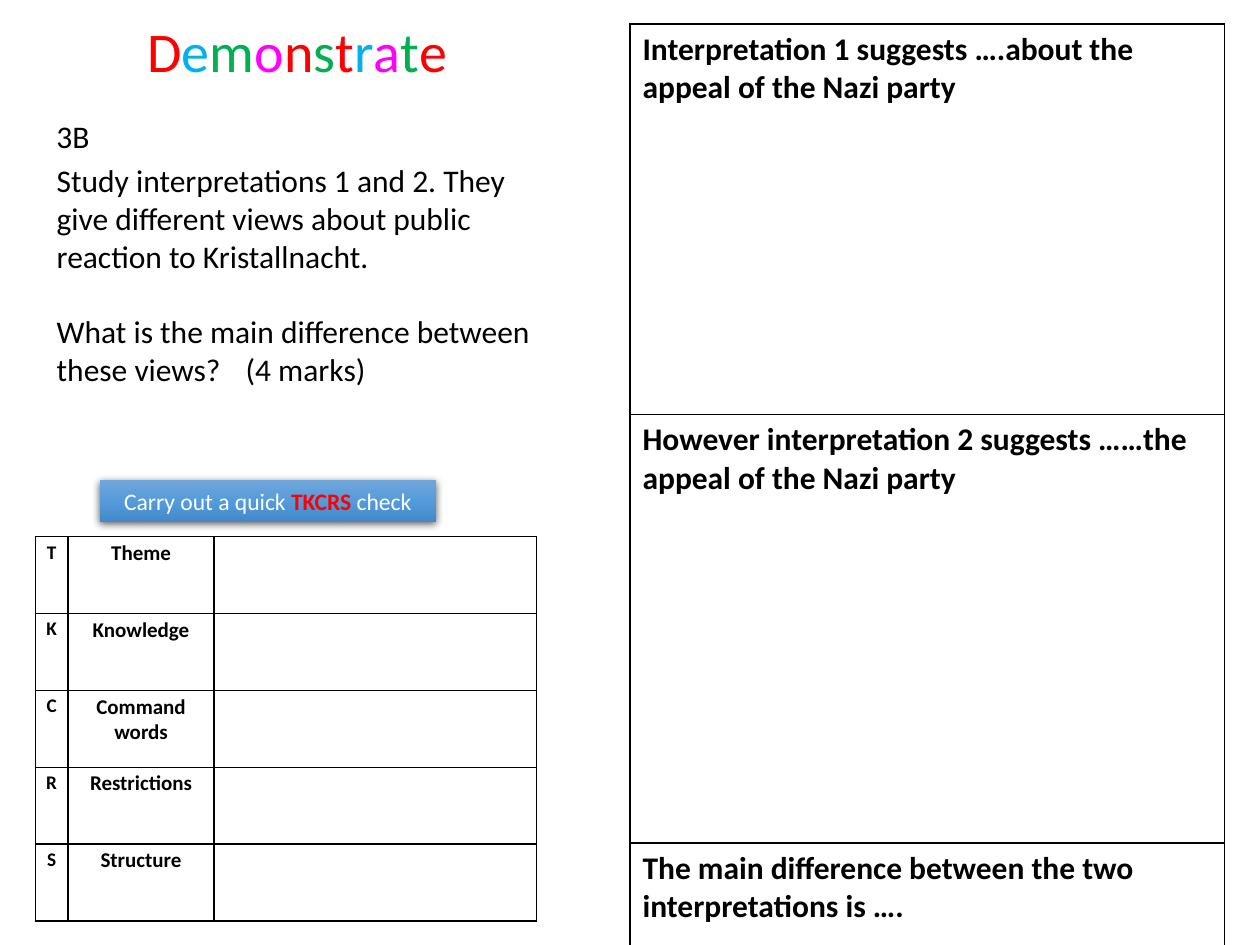
from copy import deepcopy

from lxml.etree import SubElement
from pptx import Presentation
from pptx.dml.color import RGBColor
from pptx.enum.shapes import MSO_SHAPE
from pptx.enum.text import MSO_ANCHOR, MSO_AUTO_SIZE, PP_ALIGN
from pptx.oxml import parse_xml
from pptx.oxml.ns import nsdecls, qn
from pptx.util import Inches, Pt

theme = {
    "font": "Calibri",
    "black": "000000", "white": "FFFFFF", "red": "FF0000",
    "blue": "00B0F0", "green": "00B050", "pink": "FF00FF",
    "grad": [(0, "71A6DB"), (0.5, "559BDB"), (1, "448ACA")],
    "title": 32, "body": 18, "check": 13.5, "key": 11, "label": 12,
}


def write(para, text, size, color="black", bold=False):
    run = para.add_run()
    run.text = text
    form = {"name": theme["font"], "size": Pt(theme[size]), "bold": bold}
    for key, value in form.items():
        setattr(run.font, key, value)
    run.font.color.rgb = RGBColor.from_string(theme[color])


def grid(left, top, cols, rows):
    frame = slide.shapes.add_table(
        len(rows), len(cols), Inches(left), Inches(top),
        Inches(sum(cols)), Inches(sum(rows)))
    table = frame.table
    table.first_row = table.horz_banding = False
    for col, width in zip(table.columns, cols):
        col.width = Inches(width)
    for row, height in zip(table.rows, rows):
        row.height = Inches(height)
    # Plain cells with thin black borders
    for cell in table.iter_cells():
        props = cell._tc.get_or_add_tcPr()
        for side in ("lnL", "lnR", "lnT", "lnB"):
            line = SubElement(props, qn("a:" + side), w=str(Pt(1)))
            fill = SubElement(line, qn("a:solidFill"))
            SubElement(fill, qn("a:srgbClr"), val=theme["black"])
        cell.fill.background()
    return table


deck = Presentation()
deck.slide_width, deck.slide_height = Inches(10), Inches(7.5)
slide = deck.slides.add_slide(deck.slide_layouts[1])
title, body = slide.placeholders

# Place the title and the question
places = [(title, (1.07, 0.08, 5.35, 0.64)), (body, (0.35, 1.23, 4.09, 1.92))]
for shape, place in places:
    shape.left, shape.top, shape.width, shape.height = map(Inches, place)
    form = {"auto_size": MSO_AUTO_SIZE.NONE, "word_wrap": True,
            "vertical_anchor": MSO_ANCHOR.TOP}
    for key, value in form.items():
        setattr(shape.text_frame, key, value)

# Title, one colour per letter
para = title.text_frame.paragraphs[0]
para.alignment = PP_ALIGN.LEFT
hues = ["red", "blue", "green", "pink", "red", "green",
        "red", "blue", "pink", "green", "red"]
for letter, hue in zip("Demonstrate", hues):
    write(para, letter, "title", hue)

# Question number
label = slide.shapes.add_textbox(
    Inches(0.35), Inches(0.88), Inches(0.47), Inches(0.4))
label.text_frame.word_wrap = False
write(label.text_frame.paragraphs[0], "3B", "body")

# Question, with the marks on a right tab
lines = [
    ("Study interpretations 1 and 2. They give different views about "
     "public reaction to Kristallnacht.", 0),
    ("What is the main difference between these views?\t(4 marks)", 21.6),
]
frame = body.text_frame
for i, (text, gap) in enumerate(lines):
    para = frame.add_paragraph() if i else frame.paragraphs[0]
    para.space_before = Pt(gap)
    write(para, text, "body")
    props = para._p.get_or_add_pPr()
    props.set("marL", "0")
    props.set("indent", "0")
    SubElement(props, qn("a:buNone"))
    tabs = SubElement(props, qn("a:tabLst"))
    SubElement(tabs, qn("a:tab"), pos=str(Inches(3.83)), algn="r")

# Check banner
banner = slide.shapes.add_shape(
    MSO_SHAPE.RECTANGLE, Inches(0.79), Inches(3.81), Inches(2.67), Inches(0.33))
banner.line.fill.background()
banner.fill.gradient()
banner.fill.gradient_angle = 270
stops = banner._element.spPr.find(".//" + qn("a:gsLst"))
stops.append(deepcopy(stops[0]))
for stop, (spot, color) in zip(banner.fill.gradient_stops, theme["grad"]):
    stop.position = spot
    stop.color.rgb = RGBColor.from_string(color)
banner._element.spPr.append(parse_xml(
    f'<a:effectLst {nsdecls("a")}><a:outerShdw blurRad="{Pt(4.5)}" '
    f'dist="{Pt(1.5)}" dir="5400000" rotWithShape="0">'
    f'<a:srgbClr val="{theme["black"]}"><a:alpha val="63000"/></a:srgbClr>'
    '</a:outerShdw></a:effectLst>'))
para = banner.text_frame.paragraphs[0]
para.alignment = PP_ALIGN.CENTER
write(para, "Carry out a quick ", "check", "white")
write(para, "TKCRS", "check", "red", True)
write(para, " check", "check", "white")

# Check table
checks = ["Theme", "Knowledge", "Command\nwords", "Restrictions", "Structure"]
table = grid(0.28, 4.26, [0.26, 1.16, 2.56], [0.61] * len(checks))
inset = {"margin_left": 0.06, "margin_right": 0.06,
         "margin_top": 0.03, "margin_bottom": 0.03}
for r, (key, name) in enumerate(zip("TKCRS", checks)):
    for c, (text, size) in enumerate([(key, "key"), (name, "label")]):
        cell = table.cell(r, c)
        for side, value in inset.items():
            setattr(cell, side, Inches(value))
        for i, part in enumerate(text.split("\n")):
            frame = cell.text_frame
            para = frame.add_paragraph() if i else frame.paragraphs[0]
            para.alignment = PP_ALIGN.CENTER
            write(para, part, size, bold=True)

# Answer table
starts = [
    "Interpretation 1 suggests ….about the appeal of the Nazi party",
    "However interpretation 2 suggests ……the appeal of the Nazi party",
    "The main difference between the two interpretations is ….",
]
table = grid(5, 0.19, [4.72], [3.1, 3.4, 0.85])
for cell, text in zip(table.iter_cells(), starts):
    write(cell.text_frame.paragraphs[0], text, "body", bold=True)

deck.save("out.pptx")
